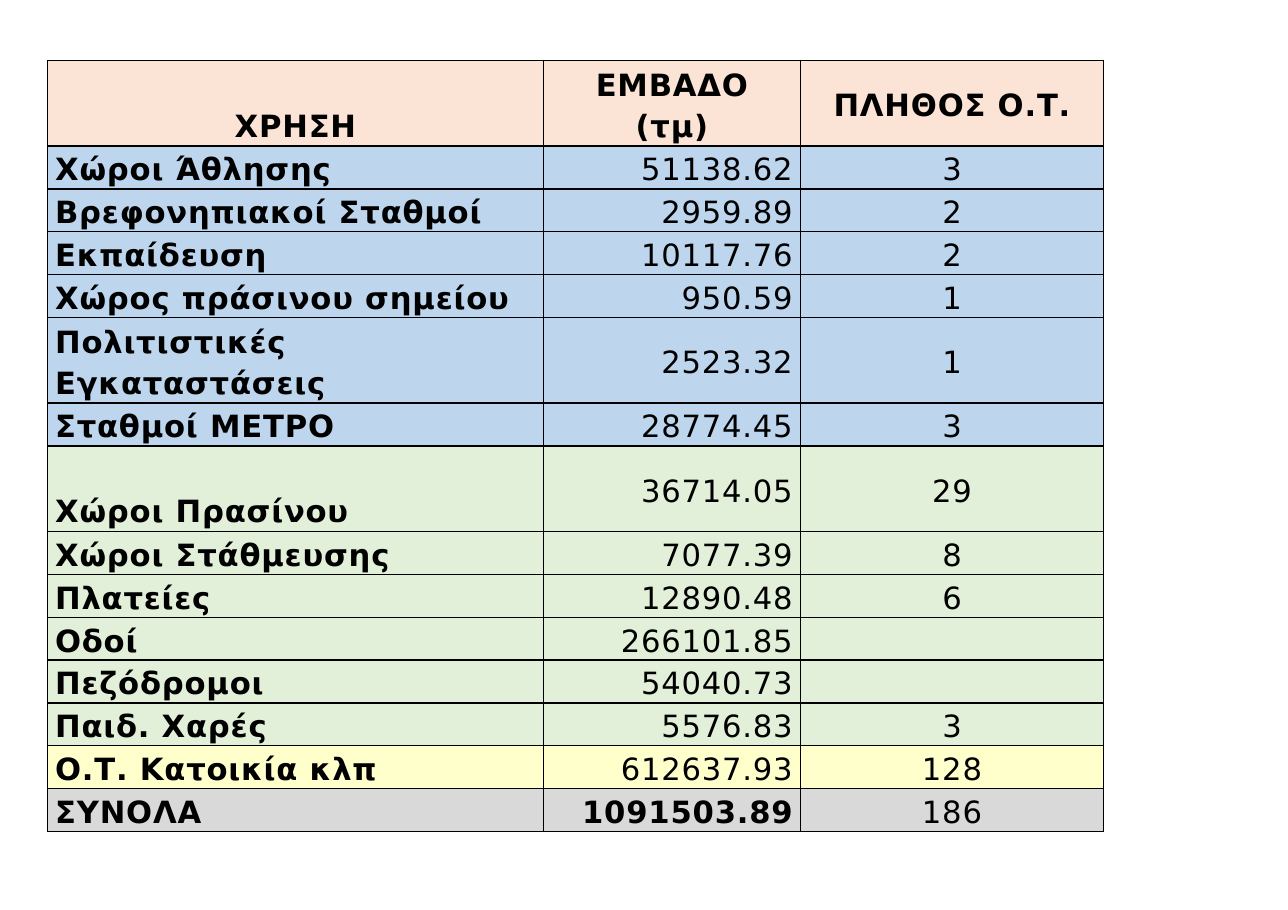
from lxml.etree import SubElement as Sub
from pptx import Presentation
from pptx.dml.color import RGBColor as RGB
from pptx.enum.text import MSO_ANCHOR as VA, PP_ALIGN as AL
from pptx.oxml.ns import qn
from pptx.util import Pt

PX = 6350
HUES = {"head": "FBE4D5", "blue": "BDD6EE", "green": "E2EFD9",
        "cream": "FFFFCC", "gray": "D9D9D9", "ink": "000000"}
COLS = [648, 336, 396]
ROW = 56
ROWS = [
    ("head", 2, "ΧΡΗΣΗ", "ΕΜΒΑΔΟ\n(τμ)", "ΠΛΗΘΟΣ Ο.Τ."),
    ("blue", 1, "Χώροι Άθλησης", "51138.62", "3"),
    ("blue", 1, "Βρεφονηπιακοί Σταθμοί", "2959.89", "2"),
    ("blue", 1, "Εκπαίδευση", "10117.76", "2"),
    ("blue", 1, "Χώρος πράσινου σημείου", "950.59", "1"),
    ("blue", 2, "Πολιτιστικές Εγκαταστάσεις", "2523.32", "1"),
    ("blue", 1, "Σταθμοί ΜΕΤΡΟ", "28774.45", "3"),
    ("green", 2, "Χώροι Πρασίνου", "36714.05", "29"),
    ("green", 1, "Χώροι Στάθμευσης", "7077.39", "8"),
    ("green", 1, "Πλατείες", "12890.48", "6"),
    ("green", 1, "Οδοί", "266101.85", ""),
    ("green", 1, "Πεζόδρομοι", "54040.73", ""),
    ("green", 1, "Παιδ. Χαρές", "5576.83", "3"),
    ("cream", 1, "Ο.Τ. Κατοικία κλπ", "612637.93", "128"),
    ("gray", 1, "ΣΥΝΟΛΑ", "1091503.89", "186"),
]
LOW = ("ΧΡΗΣΗ", "Χώροι Πρασίνου")


def write(cell, text, align=AL.CENTER, bold=False, anchor=VA.MIDDLE):
    cell.margin_left = cell.margin_right = 10 * PX
    cell.margin_top = 0
    cell.margin_bottom = 2 * PX if anchor == VA.BOTTOM else 0
    cell.vertical_anchor = anchor
    if not text:
        return
    cell.text = text
    for para in cell.text_frame.paragraphs:
        para.alignment = align
        para.line_spacing = 1.15
        for run in para.runs:
            font = run.font
            font.name, font.size, font.bold = "DejaVu Sans", Pt(20), bold
            font.color.rgb = RGB.from_string(HUES["ink"])
            run._r.get_or_add_rPr().set("spc", "50")


def edge(cell):
    props = cell._tc.get_or_add_tcPr()
    for side in ("lnL", "lnR", "lnT", "lnB"):
        line = Sub(props, qn("a:" + side), w=str(Pt(1)))
        Sub(Sub(line, qn("a:solidFill")), qn("a:srgbClr"), val=HUES["ink"])


deck = Presentation()
deck.slide_width, deck.slide_height = 1683 * PX, 1189 * PX
slide = deck.slides.add_slide(deck.slide_layouts[6])
high = ROW * sum(row[1] for row in ROWS)
grid = slide.shapes.add_table(len(ROWS), len(COLS), 62 * PX, 79 * PX,
                              sum(COLS) * PX, high * PX).table
grid.first_row = grid.horz_banding = False
for col, wide in zip(grid.columns, COLS):
    col.width = wide * PX

for r, (hue, span, *texts) in enumerate(ROWS):
    grid.rows[r].height = span * ROW * PX
    for c, text in enumerate(texts):
        cell = grid.cell(r, c)
        edge(cell)
        cell.fill.solid()
        cell.fill.fore_color.rgb = RGB.from_string(HUES[hue])
        write(cell, text,
              align=AL.CENTER if r == 0 else (AL.JUSTIFY, AL.RIGHT, AL.CENTER)[c],
              bold=r == 0 or c == 0 or (hue == "gray" and c == 1),
              anchor=VA.BOTTOM if text in LOW else VA.MIDDLE)

deck.save("out.pptx")
